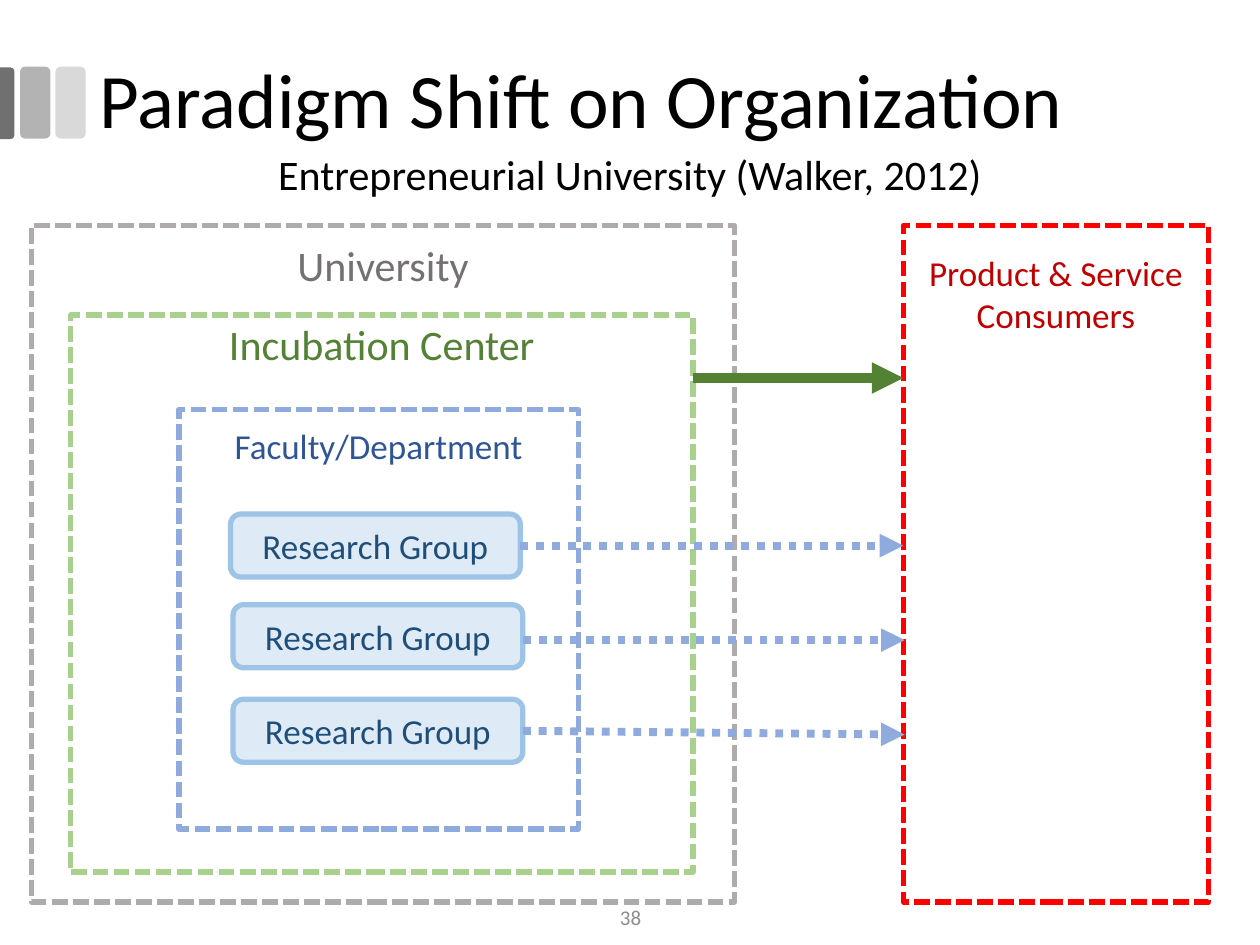
import pptx
import pptx.util
import pptx.dml.color
import pptx.enum.dml
import pptx.enum.shapes
import pptx.enum.text
import pptx.oxml
import pptx.oxml.ns

Inches = pptx.util.Inches
Pt = pptx.util.Pt
RGBColor = pptx.dml.color.RGBColor
SHAPE = pptx.enum.shapes.MSO_SHAPE
DASH = pptx.enum.dml.MSO_LINE
ALIGN = pptx.enum.text.PP_ALIGN
ANCHOR = pptx.enum.text.MSO_ANCHOR

BLACK = RGBColor(0x00, 0x00, 0x00)
GRAY = RGBColor(0xAF, 0xAB, 0xAB)
GRAY_TEXT = RGBColor(0x76, 0x71, 0x71)
NUMBER_GRAY = RGBColor(0x8C, 0x8C, 0x8C)
GREEN = RGBColor(0xA9, 0xD1, 0x8E)
GREEN_DARK = RGBColor(0x54, 0x82, 0x35)
BLUE = RGBColor(0x8F, 0xAA, 0xDC)
BLUE_DARK = RGBColor(0x2F, 0x55, 0x97)
RED = RGBColor(0xFF, 0x00, 0x00)
RED_DARK = RGBColor(0xC0, 0x00, 0x00)
GROUP_FILL = RGBColor(0xDE, 0xEB, 0xF7)
GROUP_LINE = RGBColor(0x9D, 0xC3, 0xE6)
GROUP_TEXT = RGBColor(0x1F, 0x4E, 0x79)
MARK_DARK = RGBColor(0x70, 0x70, 0x70)
MARK_MID = RGBColor(0xB3, 0xB3, 0xB3)
MARK_LIGHT = RGBColor(0xD9, 0xD9, 0xD9)

TITLE = "Paradigm Shift on Organization"
SUBTITLE = "Entrepreneurial University (Walker, 2012)"
PAGE_NUMBER = "38"
ZONES = [
    ("University", (0.25, 1.79, 5.58, 5.37), GRAY, GRAY_TEXT, 24, 0.11),
    ("Incubation Center", (0.56, 2.5, 4.94, 4.42), GREEN, GREEN_DARK, 24, 0.03),
    ("Faculty/Department", (1.42, 3.25, 3.17, 3.33), BLUE, BLUE_DARK, 20, 0.12),
    ("Product & Service Consumers", (7.17, 1.79, 2.42, 5.37), RED, RED_DARK, 20, 0.21),
]
GROUP_NAME = "Research Group"
GROUP_SIZE = (2.3, 0.5)
GROUPS = [
    {"corner": (1.83, 4.08), "start": 4.33, "end": (7.17, 4.33)},
    {"corner": (1.85, 4.8), "start": 5.08, "end": (7.18, 5.08)},
    {"corner": (1.85, 5.55), "start": 5.8, "end": (7.18, 5.83)},
]
MARKS = [
    (SHAPE.ROUNDED_RECTANGLE, (0.44, 0.53, 0.24, 0.57), MARK_LIGHT, 0),
    (SHAPE.ROUNDED_RECTANGLE, (0.16, 0.53, 0.24, 0.57), MARK_MID, 0),
    (SHAPE.ROUND_2_SAME_RECTANGLE, (-0.23, 0.76, 0.57, 0.12), MARK_DARK, 90),
]


def write(holder, text, size, color, align=ALIGN.CENTER, anchor=ANCHOR.MIDDLE,
          top=0.05, wrap=True, spacing=None):
    frame = holder.text_frame
    frame.word_wrap = wrap
    frame.vertical_anchor = anchor
    frame.margin_top = Inches(top)
    paragraph = frame.paragraphs[0]
    paragraph.text = text
    paragraph.alignment = align
    paragraph.line_spacing = spacing
    paragraph.font.name = "Calibri"
    paragraph.font.size = Pt(size)
    paragraph.font.color.rgb = color


def add_block(slide, preset, box, fill=None, line=None, dash=None):
    block = slide.shapes.add_shape(preset, *map(Inches, box))
    block.shadow.inherit = False
    if fill is None:
        block.fill.background()
    else:
        block.fill.solid()
        block.fill.fore_color.rgb = fill
    if line is None:
        block.line.fill.background()
    else:
        block.line.color.rgb = line
        block.line.width = Pt(3)
        block.line.dash_style = dash
    return block


def add_arrow(slide, start, end, color, width, dash=None):
    arrow = slide.shapes.add_connector(
        pptx.enum.shapes.MSO_CONNECTOR.STRAIGHT, *map(Inches, start + end))
    arrow.line.color.rgb = color
    arrow.line.width = Pt(width)
    arrow.line.dash_style = dash
    head = pptx.oxml.parse_xml(
        '<a:tailEnd %s type="triangle"/>' % pptx.oxml.ns.nsdecls("a"))
    arrow.line._get_or_add_ln().append(head)
    arrow._element.spPr.append(pptx.oxml.parse_xml(
        "<a:effectLst %s/>" % pptx.oxml.ns.nsdecls("a")))
    return arrow


def add_label(slide, box, text, **text_format):
    label = slide.shapes.add_textbox(*map(Inches, box))
    write(label, text, **text_format)


def main():
    deck = pptx.Presentation()
    deck.slide_width, deck.slide_height = Inches(10), Inches(7.5)
    slide = deck.slides.add_slide(deck.slide_layouts[5])

    for preset, box, color, rotation in MARKS:
        mark = add_block(slide, preset, box, fill=color)
        mark.rotation = rotation
        if rotation:
            mark.adjustments[0] = 0.29

    title = slide.shapes.title
    title.left, title.top, title.width, title.height = map(Inches, (0.69, 0.17, 8.62, 1.31))
    write(title, TITLE, size=44, color=BLACK, align=ALIGN.LEFT, spacing=0.9)

    for name, box, line, color, size, top in ZONES:
        zone = add_block(slide, SHAPE.RECTANGLE, box, line=line, dash=DASH.SQUARE_DOT)
        write(zone, name, size=size, color=color, anchor=ANCHOR.TOP, top=top)

    add_label(slide, (3.88, 7.08, 2.25, 0.4), PAGE_NUMBER, size=12, color=NUMBER_GRAY)

    add_arrow(slide, (5.5, 3), (7.17, 3), GREEN_DARK, 6)
    width, height = GROUP_SIZE
    for group in GROUPS:
        left, top = group["corner"]
        team = add_block(slide, SHAPE.ROUNDED_RECTANGLE, (left, top, width, height),
                         fill=GROUP_FILL, line=GROUP_LINE)
        write(team, GROUP_NAME, size=20, color=GROUP_TEXT)
        arrow = add_arrow(slide, (left + width, group["start"]), group["end"],
                          BLUE, 4.5, DASH.ROUND_DOT)
        if abs(top + height / 2 - group["start"]) < 0.01:
            arrow.begin_connect(team, 3)

    add_label(slide, (2.08, 1.13, 5.84, 0.5), SUBTITLE, size=24, color=BLACK,
              anchor=ANCHOR.TOP, wrap=False)
    deck.save("out.pptx")


if __name__ == "__main__":
    main()
